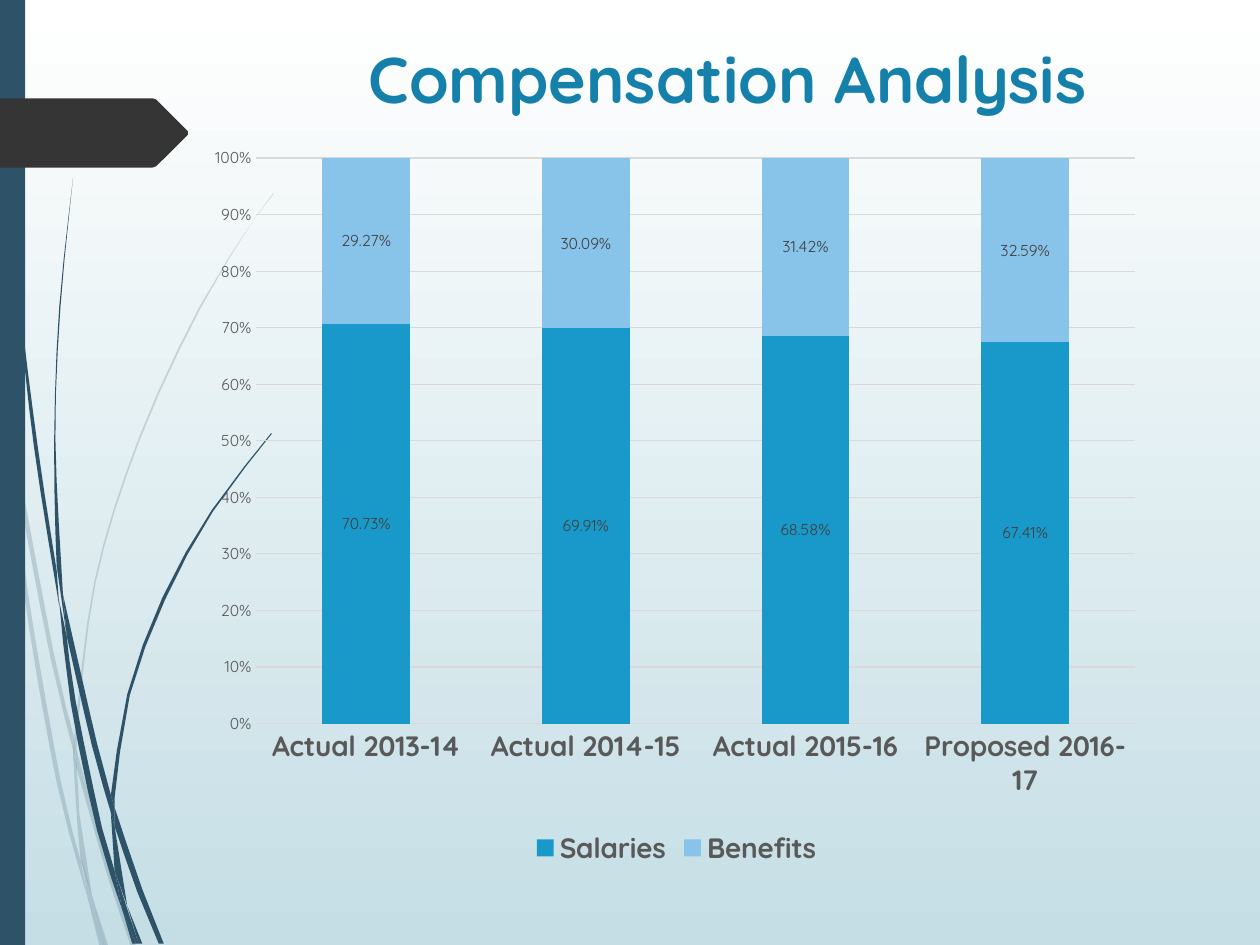
from math import dist

from lxml.etree import SubElement
from pptx import Presentation
from pptx.chart.data import CategoryChartData
from pptx.dml.color import RGBColor
from pptx.enum.chart import XL_CHART_TYPE, XL_LABEL_POSITION, XL_LEGEND_POSITION, XL_TICK_MARK
from pptx.enum.shapes import MSO_SHAPE
from pptx.enum.text import MSO_ANCHOR, PP_ALIGN
from pptx.oxml import parse_xml
from pptx.oxml.ns import nsdecls, qn
from pptx.util import Inches, Pt

FONT = "Quicksand"
HUES = {
    "top": "FFFFFF", "base": "C5DEE5", "navy": "2E5369", "tag": "353535",
    "title": "1581AA", "axis": "595959", "label": "404040", "grid": "D9D9D9",
    "Salaries": "1999C9", "Benefits": "88C3EA",
}

# Each strand is a pair of edges: out along one side, back along the other
PALE = [
    ([(.08, 3.5), (.06, 3.22), (0, 2.82)], [(0, 2.99), (.07, 3.44)]),
    ([(.59, 5.86), (.43, 5.2), (.1, 3.45)], [(.12, 3.76), (.4, 5.22), (.59, 5.99)]),
    ([(.61, 5.96), (.88, 6.92), (1.08, 7.51)], [(1.04, 7.51), (.85, 6.94), (.61, 6.1)]),
    ([(.73, 7.11), (.86, 7.51)], [(.83, 7.51)]),
    ([(.08, 3.5), (.19, 4.7), (.45, 6.21), (.7, 7.14)],
     [(.64, 6.83), (.48, 6.19), (.22, 4.69), (.12, 3.76)]),
    ([(.58, 5.99), (.64, 6.83), (.73, 7.11)], [(.63, 6.46), (.61, 6.08)]),
    ([(.61, 5.96), (.61, 5.84), (.76, 4.62), (1.11, 3.49), (1.59, 2.45), (2.01, 1.75),
      (2.17, 1.54)],
     [(2.17, 1.53), (2.01, 1.75), (1.58, 2.44), (1.1, 3.48), (.75, 4.61), (.59, 5.84)]),
    ([(.7, 7.14), (.79, 7.51)], [(.82, 7.51)]),
    ([(.61, 6.1), (.61, 5.96)], [(.59, 5.86), (.58, 5.99)]),
    ([(.65, 6.83), (.7, 7.14), (.82, 7.51)], [(.83, 7.51), (.73, 7.11)]),
]
DARK = [
    ([(.02, 0), (.05, 1.1), (.14, 2.33), (.27, 3.55), (.47, 4.81)],
     [(.45, 4.53), (.3, 3.55), (.15, 2.32), (.06, 1.09), (.03, 0)]),
    ([(.88, 6.31), (.77, 5.9), (.5, 4.72)], [(.53, 5.05), (.73, 5.92), (.88, 6.45)]),
    ([(.91, 6.41), (1.13, 7.06), (1.3, 7.49)], [(1.26, 7.49), (1.09, 7.08), (.91, 6.56)]),
    ([(.47, 4.77), (.56, 5.57), (.77, 6.59), (.97, 7.22)],
     [(.91, 6.91), (.81, 6.57), (.6, 5.56), (.53, 5.05)]),
    ([(.5, 4.72), (.44, 3.49), (.48, 2.44), (.58, 1.41)],
     [(.58, 1.41), (.47, 2.44), (.43, 3.49), (.45, 4.49), (.49, 4.72)]),
    ([(1.01, 7.19), (1.1, 7.49)], [(1.13, 7.49)]),
    ([(.45, 4.49), (.53, 5.05)], [(.5, 4.72)]),
    ([(.91, 6.41), (.91, 6.33), (1.03, 5.52), (1.31, 4.76), (1.69, 4.06), (2.16, 3.44)],
     [(2.15, 3.44), (1.68, 4.05), (1.29, 4.74), (1.01, 5.51), (.88, 6.31)]),
    ([(.97, 7.22), (1.05, 7.49)], [(1.08, 7.49)]),
    ([(.88, 6.45), (.91, 6.91), (1.01, 7.19)], [(.91, 6.56)]),
    ([(.88, 6.45), (.91, 6.56), (.91, 6.41)], [(.88, 6.31)]),
    ([(.91, 6.91), (.97, 7.22), (1.08, 7.49)], [(1.1, 7.49), (.96, 7.06)]),
]


def hue(name):
    return RGBColor.from_string(HUES[name])


def pen(font, size, color, bold=False):
    font.name, font.size, font.bold = FONT, Pt(size), bold
    font.color.rgb = hue(color)


def write(frame, text, size=18, color="axis", bold=False, align=PP_ALIGN.LEFT):
    para = frame.paragraphs[0]
    para.alignment = align
    run = para.add_run()
    run.text = text
    pen(run.font, size, color, bold)


def paint(shape, color, alpha=100):
    shape.shadow.inherit = False
    shape.fill.solid()
    shape.fill.fore_color.rgb = hue(color)
    shape.line.fill.background()
    if alpha < 100:
        tint = shape.fill._xPr.find(qn("a:solidFill"))[0]
        SubElement(tint, qn("a:alpha")).set("val", str(alpha * 1000))


def curve(knots):
    """Smooth a run of points with a Catmull-Rom spline, three steps an inch."""
    ends = [knots[0], *knots, knots[-1]]
    dots = [knots[0]]
    for a, b, c, d in zip(ends, ends[1:], ends[2:], ends[3:]):
        steps = max(1, round(3 * dist(b, c)))
        for i in range(1, steps + 1):
            t = i / steps
            dots.append(tuple(
                (2 * q + (r - p) * t + (2 * p - 5 * q + 4 * r - s) * t ** 2
                 + (3 * q - p - 3 * r + s) * t ** 3) / 2
                for p, q, r, s in zip(a, b, c, d)))
    return dots


def outline(shapes, dots, color, alpha=100):
    spots = [(Inches(x), Inches(y)) for x, y in dots]
    path = shapes.build_freeform(*spots[0], scale=1.0)
    path.add_line_segments(spots[1:], close=True)
    paint(path.convert_to_shape(), color, alpha)


def strands(slide, wisps, alpha):
    group = slide.shapes.add_group_shape()
    for out, back in wisps:
        outline(group.shapes, curve(out) + curve(back), "navy", alpha)


def side(slide, left, top, width, height):
    # Wisps, edge bar and page tag
    strands(slide, PALE, 20)
    strands(slide, DARK, 100)
    bar = slide.shapes.add_shape(MSO_SHAPE.RECTANGLE, left, top, width, height)
    paint(bar, "navy")
    tag = [(0, .78), (1.21, .78), (1.24, .79), (1.49, 1.04), (1.49, 1.07),
           (1.24, 1.32), (1.21, 1.33), (0, 1.33)]
    outline(slide.shapes, tag, "tag")


def head(slide, left, top, width, height):
    title = slide.shapes.title
    title.left, title.top, title.width, title.height = left, top, width, height
    frame = title.text_frame
    frame.vertical_anchor = MSO_ANCHOR.MIDDLE
    write(frame, "Compensation Analysis", size=37, color="title", bold=True,
          align=PP_ALIGN.CENTER)


def rule(line):
    line.color.rgb = hue("grid")
    line.width = Pt(0.75)


def graph(slide, left, top, width, height):
    data = CategoryChartData(number_format="0.00%")
    data.categories = ["Actual 2013-14", "Actual 2014-15", "Actual 2015-16", "Proposed 2016-17"]
    data.add_series("Salaries", [.7073, .6991, .6858, .6741])
    data.add_series("Benefits", [.2927, .3009, .3142, .3259])
    chart = slide.shapes.add_chart(
        XL_CHART_TYPE.COLUMN_STACKED_100, left, top, width, height, data).chart
    chart.has_title = False
    chart.font.name, chart.font.size = FONT, Pt(10)

    # Columns and their labels
    plot = chart.plots[0]
    plot.gap_width, plot.overlap, plot.vary_by_categories = 150, 100, False
    for series in plot.series:
        series.format.fill.solid()
        series.format.fill.fore_color.rgb = hue(series.name)
        labels = series.data_labels
        labels.show_value = True
        labels.number_format, labels.number_format_is_linked = "0.00%", False
        labels.position = XL_LABEL_POSITION.CENTER
        pen(labels.font, 9, "label")

    # Axes and legend
    cat, val = chart.category_axis, chart.value_axis
    for axis in (cat, val):
        axis.major_tick_mark = axis.minor_tick_mark = XL_TICK_MARK.NONE
    pen(cat.tick_labels.font, 16, "axis", True)
    rule(cat.format.line)
    pen(val.tick_labels.font, 9, "axis")
    val.tick_labels.number_format, val.tick_labels.number_format_is_linked = "0%", False
    val.format.line.fill.background()
    rule(val.major_gridlines.format.line)
    chart.has_legend = True
    chart.legend.position = XL_LEGEND_POSITION.BOTTOM
    chart.legend.include_in_layout = False
    pen(chart.legend.font, 16, "axis", True)

    # Fixed inner plot box, as shares of the chart
    area = chart._chartSpace.chart.plotArea
    for old in area.findall(qn("c:layout")):
        area.remove(old)
    parts = "".join(f'<c:{key} val="{share}"/>' for key, share in (
        ("layoutTarget", "inner"), ("xMode", "edge"), ("yMode", "edge"),
        ("x", .06), ("y", .03), ("w", .92), ("h", .77)))
    area.insert(0, parse_xml(
        f'<c:layout {nsdecls("c")}><c:manualLayout>{parts}</c:manualLayout></c:layout>'))


def main():
    deck = Presentation()
    deck.slide_width, deck.slide_height = Inches(10), Inches(7.5)
    slide = deck.slides.add_slide(deck.slide_layouts[5])
    fill = slide.background.fill
    fill.gradient()
    fill.gradient_angle = 270
    for stop, name in zip(fill.gradient_stops, ("top", "base")):
        stop.color.rgb = hue(name)
    side(slide, 0, 0, Inches(0.2), Inches(7.5))
    head(slide, Inches(2.17), Inches(0.25), Inches(7.21), Inches(0.73))
    graph(slide, Inches(1.58), Inches(1.08), Inches(7.58), Inches(5.83))
    deck.save("out.pptx")


if __name__ == "__main__":
    main()
